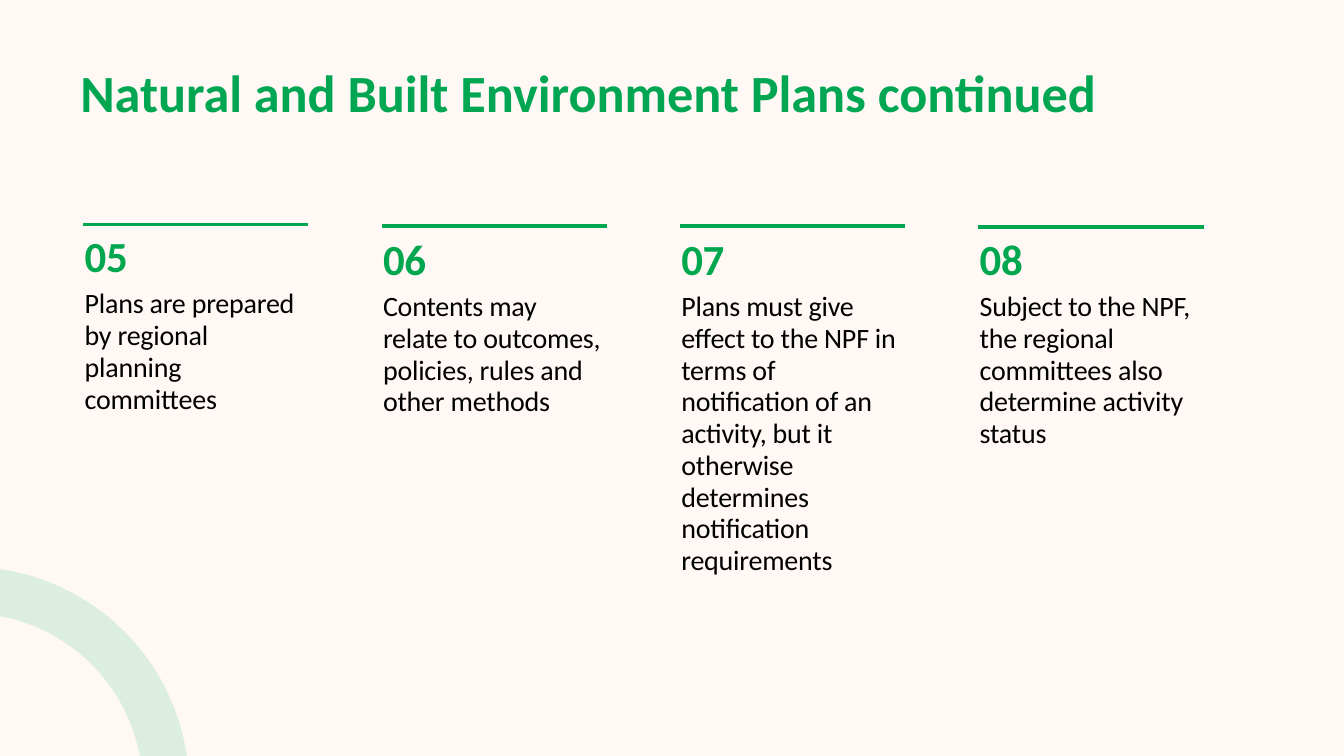
from math import asin, cos, pi, sin, sqrt

from lxml.etree import SubElement
from pptx import Presentation
from pptx.dml.color import RGBColor
from pptx.enum.shapes import MSO_CONNECTOR as Connector
from pptx.enum.text import MSO_ANCHOR as Anchor, MSO_AUTO_SIZE as AutoSize
from pptx.oxml.ns import qn
from pptx.util import Inches, Pt

CREAM = RGBColor(0xFF, 0xF8, 0xF5)
MINT = RGBColor(0xCE, 0xE9, 0xD9)
TITLE_GREEN = RGBColor(0x00, 0xA6, 0x51)
GREEN = RGBColor(0x00, 0xA7, 0x4F)
BLACK = RGBColor(0x00, 0x00, 0x00)

# Square grid: 100 columns by 56.25 rows (16:9)
COLS, ROWS = 100, 56.25
CELL = Inches(10) / COLS
FIRST_COL, COL_STEP, COL_WIDTH = 6.2, 22.2, 16.75


def grid(n):
    return round(n * CELL)


class Deck:
    """Holds the text styles and the current slide."""

    styles = {
        "title": {"font": {"size": Pt(28), "bold": True}, "color": TITLE_GREEN},
        "number": {"font": {"size": Pt(23), "bold": True}, "color": GREEN,
                   "spc": -20},
        "body": {"font": {"size": Pt(15), "bold": False}, "color": BLACK,
                 "spc": -10,
                 "para": {"line_spacing": Pt(17), "space_before": Pt(3.6)}},
    }

    def __init__(self, prs):
        self.s = prs.slides.add_slide(prs.slide_layouts[6])
        fill = self.s.background.fill
        fill.solid()
        fill.fore_color.rgb = CREAM

    def text(self, x, y, w, h, lines, **frame):
        """Text box; lines are (style name, text) pairs."""
        sp = self.s.shapes.add_textbox(*map(grid, (x, y, w, h)))
        tf = sp.text_frame
        for name, value in {"word_wrap": True, **frame}.items():
            setattr(tf, name, value)
        for i, (style, words) in enumerate(lines):
            fmt = self.styles[style]
            p = tf.add_paragraph() if i else tf.paragraphs[0]
            for name, value in fmt.get("para", {}).items():
                setattr(p, name, value)
            r = p.add_run()
            r.text = words
            for name, value in {"name": "Calibri", **fmt["font"]}.items():
                setattr(r.font, name, value)
            r.font.color.rgb = fmt["color"]
            if "spc" in fmt:
                r.font._element.set("spc", str(fmt["spc"]))

    def rule(self, x, y, w):
        """Horizontal green line."""
        line = self.s.shapes.add_connector(
            Connector.STRAIGHT, *map(grid, (x, y, x + w, y)))
        line.line.color.rgb = GREEN
        line.line.width = Pt(2)
        SubElement(line._element.spPr, qn("a:effectLst"))

    def corner_ring(self, outer, inner, offset, opacity, steps=48):
        """Ring clipped to the bottom left corner; its centre lies off-slide."""
        def arc(reach):
            radius = sqrt((reach + offset) ** 2 + offset ** 2)
            start = asin(offset / radius)
            sweep = pi / 2 - 2 * start
            angles = [start + sweep * i / steps for i in range(steps + 1)]
            return [(grid(radius * cos(a) - offset),
                     grid(ROWS + offset - radius * sin(a))) for a in angles]

        points = arc(outer) + arc(inner)[::-1]
        fb = self.s.shapes.build_freeform(*points[0])
        fb.add_line_segments(points[1:], close=True)
        sp = fb.convert_to_shape()
        sp.shadow.inherit = False
        sp.line.fill.background()
        sp.fill.solid()
        sp.fill.fore_color.rgb = MINT
        color = sp._element.spPr.find(".//" + qn("a:srgbClr"))
        SubElement(color, qn("a:alpha"), val=str(opacity * 1000))


# Number, text, top of the text, top of the rule, height of the text
POINTS = [
    ("05", "Plans are prepared by regional planning committees",
     16.6, 16.7, 14.4),
    ("06", "Contents may relate to outcomes, policies, rules and other methods",
     16.8, 16.8, 14.4),
    ("07", "Plans must give effect to the NPF in terms of notification of an "
     "activity, but it otherwise determines notification requirements",
     16.8, 16.8, 26.4),
    ("08", "Subject to the NPF, the regional committees also determine "
     "activity status", 16.8, 16.9, 16.8),
]


def main():
    prs = Presentation()
    prs.slide_width, prs.slide_height = grid(COLS), grid(ROWS)
    deck = Deck(prs)

    # Corner decoration and title
    deck.corner_ring(outer=13.9, inner=10.4, offset=2.36, opacity=70)
    deck.text(5, 3.85, 90, 5.9,
              [("title", "Natural and Built Environment Plans continued")],
              vertical_anchor=Anchor.MIDDLE)

    # Four numbered columns
    for i, (number, words, top, rule_top, height) in enumerate(POINTS):
        x = FIRST_COL + i * COL_STEP
        deck.text(x, top, COL_WIDTH, height,
                  [("number", number), ("body", words)],
                  margin_left=Inches(0.01), margin_right=Inches(0.02),
                  margin_top=Inches(0.05), margin_bottom=0,
                  auto_size=AutoSize.SHAPE_TO_FIT_TEXT)
        deck.rule(x, rule_top, COL_WIDTH)

    prs.save("out.pptx")


if __name__ == "__main__":
    main()
